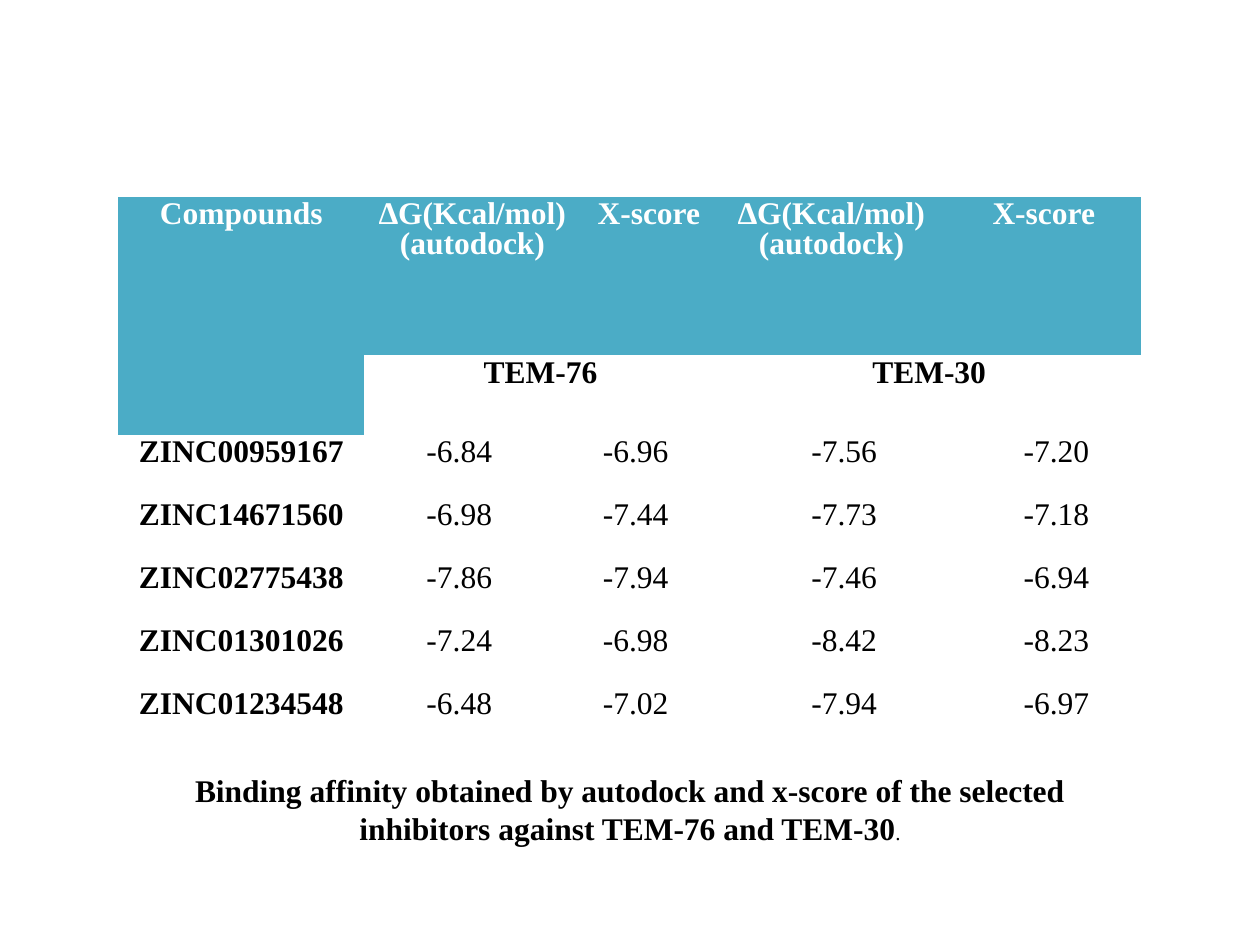
import pptx
import pptx.dml.color
import pptx.enum.text
import pptx.oxml.ns
import pptx.util

Inches = pptx.util.Inches
Pt = pptx.util.Pt

TEAL = pptx.dml.color.RGBColor(0x4B, 0xAC, 0xC6)
WHITE = pptx.dml.color.RGBColor(0xFF, 0xFF, 0xFF)
BLACK = pptx.dml.color.RGBColor(0x00, 0x00, 0x00)

PLAIN_TABLE_STYLE = "{2D5ABB26-0587-4C30-8999-92F81FD0307C}"
COLUMN_WIDTHS = [1.95, 1.51, 0.21, 1.08, 1.82, 0.2, 1.35]
ROW_HEIGHTS = [1.26, 0.63] + [0.5] * 5

# Header cells: row, column, row span, column span, text, font colour, fill
HEADERS = [
    (0, 0, 2, 1, "Compounds", WHITE, TEAL),
    (0, 1, 1, 2, "∆G(Kcal/mol) (autodock)", WHITE, TEAL),
    (0, 3, 1, 1, "X-score", WHITE, TEAL),
    (0, 4, 1, 1, "∆G(Kcal/mol) (autodock)", WHITE, TEAL),
    (0, 5, 1, 2, "X-score", WHITE, TEAL),
    (1, 1, 1, 3, "TEM-76", BLACK, None),
    (1, 4, 1, 3, "TEM-30", BLACK, None),
]

# First column and column span of each field in a compound row
FIELD_SPANS = [(0, 1), (1, 1), (2, 2), (4, 2), (6, 1)]
COMPOUNDS = [
    ("ZINC00959167", "-6.84", "-6.96", "-7.56", "-7.20"),
    ("ZINC14671560", "-6.98", "-7.44", "-7.73", "-7.18"),
    ("ZINC02775438", "-7.86", "-7.94", "-7.46", "-6.94"),
    ("ZINC01301026", "-7.24", "-6.98", "-8.42", "-8.23"),
    ("ZINC01234548", "-6.48", "-7.02", "-7.94", "-6.97"),
]


def set_attributes(target, values):
    for name, value in values.items():
        setattr(target, name, value)


def add_run(paragraph, text, color=BLACK, bold=False, size=18):
    run = paragraph.add_run()
    run.text = text
    set_attributes(run.font, {
        "name": "Times New Roman", "size": Pt(size), "bold": bold})
    run.font.color.rgb = color


def fill_cell(table, row, column, row_span, column_span, text,
              color=BLACK, fill=None, bold=True):
    cell = table.cell(row, column)
    if row_span > 1 or column_span > 1:
        cell.merge(table.cell(row + row_span - 1, column + column_span - 1))
    set_attributes(cell, {
        "margin_left": Inches(0.08), "margin_right": Inches(0.08),
        "margin_top": Inches(0.03), "margin_bottom": 0})
    if fill is None:
        cell.fill.background()
    else:
        cell.fill.solid()
        cell.fill.fore_color.rgb = fill
    paragraph = cell.text_frame.paragraphs[0]
    set_attributes(paragraph, {
        "alignment": pptx.enum.text.PP_ALIGN.CENTER, "line_spacing": 0.86})
    add_run(paragraph, text, color, bold)


def add_affinity_table(slide):
    frame = slide.shapes.add_table(
        len(ROW_HEIGHTS), len(COLUMN_WIDTHS),
        Inches(0.94), Inches(1.56), Inches(8.13), Inches(4.38))
    table = frame.table
    set_attributes(table, {"first_row": False, "horz_banding": False})
    style = frame._element.find(".//" + pptx.oxml.ns.qn("a:tableStyleId"))
    style.text = PLAIN_TABLE_STYLE
    for column, width in zip(table.columns, COLUMN_WIDTHS):
        column.width = Inches(width)
    for row, height in zip(table.rows, ROW_HEIGHTS):
        row.height = Inches(height)

    # Header rows
    for header in HEADERS:
        fill_cell(table, *header)

    # Compound rows, with the name in bold
    for row, fields in enumerate(COMPOUNDS, start=2):
        for (column, span), text in zip(FIELD_SPANS, fields):
            fill_cell(table, row, column, 1, span, text, bold=column == 0)


def add_caption(slide):
    box = slide.shapes.add_textbox(
        Inches(0.94), Inches(6.07), Inches(8.12), Inches(0.9))
    set_attributes(box.text_frame, {
        "word_wrap": True,
        "vertical_anchor": pptx.enum.text.MSO_ANCHOR.TOP})
    paragraph = box.text_frame.paragraphs[0]
    paragraph.alignment = pptx.enum.text.PP_ALIGN.CENTER
    add_run(paragraph, "Binding affinity obtained by autodock and x-score of "
            "the selected inhibitors against TEM-76 and TEM-30", bold=True)
    add_run(paragraph, ".", size=12)


def main():
    presentation = pptx.Presentation()
    set_attributes(presentation, {
        "slide_width": Inches(10), "slide_height": Inches(7.5)})
    # Blank layout: the slide has no title
    slide = presentation.slides.add_slide(presentation.slide_layouts[6])
    add_affinity_table(slide)
    add_caption(slide)
    presentation.save("out.pptx")


if __name__ == "__main__":
    main()
